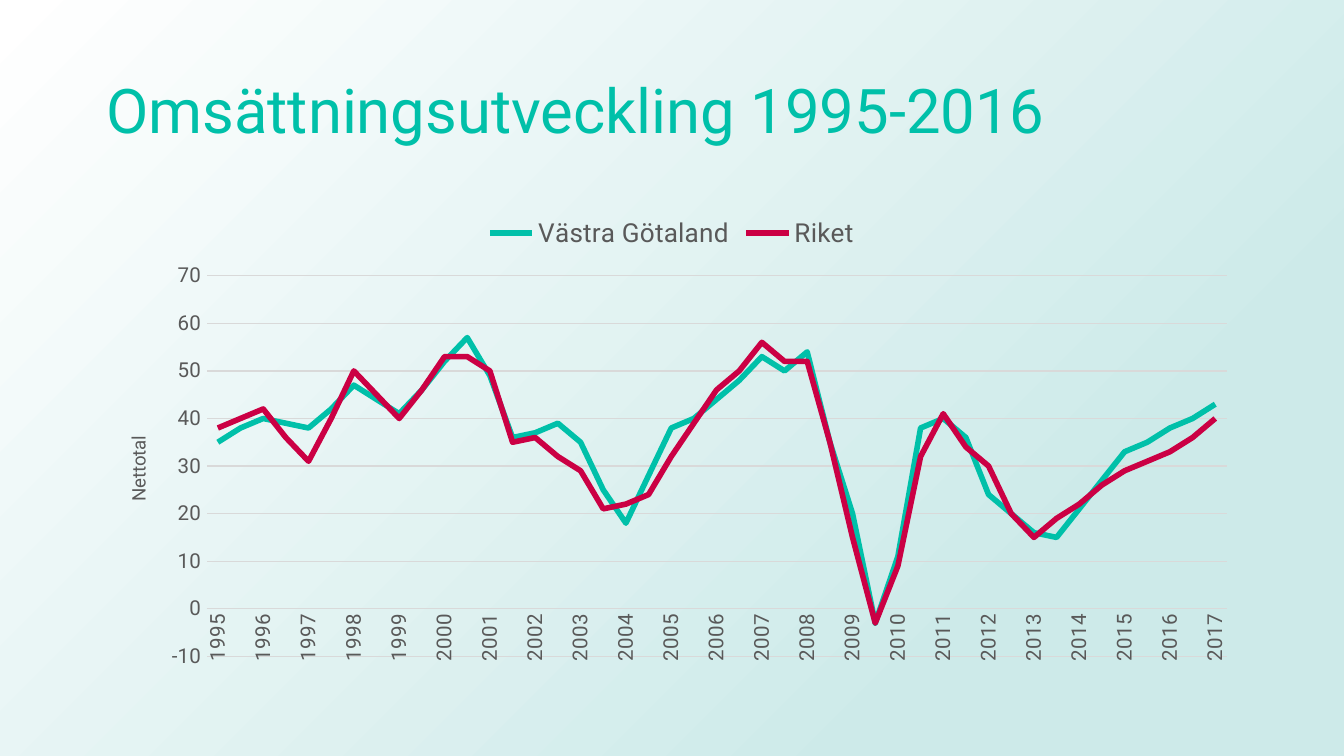
from lxml.etree import fromstring as to_xml
from pptx import Presentation as Deck
from pptx.chart.data import CategoryChartData as Data
from pptx.dml.color import RGBColor as Rgb
from pptx.enum.chart import XL_CHART_TYPE as Kind, XL_LEGEND_POSITION as Side, XL_TICK_MARK as Tick
from pptx.enum.shapes import MSO_SHAPE as Form
from pptx.enum.text import MSO_ANCHOR as Anchor
from pptx.oxml.ns import nsdecls, qn
from pptx.util import Pt

PX = 914400 / 134.4
WIDE, HIGH = 1344, 756
FONT = "Roboto"
HEX = {"teal": "00C0A9", "red": "CB0044", "grid": "D9D9D9", "text": "595959",
       "mist": "CDEAE9", "white": "FFFFFF"}
YEARS = [str(1995 + n // 2) for n in range(45)]
LINES = {
    "Västra Götaland": ("teal", [
        35, 38, 40, 39, 38, 42, 47, 44, 41, 46, 52, 57, 49, 36, 37,
        39, 35, 25, 18, 28, 38, 40, 44, 48, 53, 50, 54, 35, 20, -3,
        11, 38, 40, 36, 24, 20, 16, 15, 21, 27, 33, 35, 38, 40, 43]),
    "Riket": ("red", [
        38, 40, 42, 36, 31, 40, 50, 45, 40, 46, 53, 53, 50, 35, 36,
        32, 29, 21, 22, 24, 32, 39, 46, 50, 56, 52, 52, 35, 15, -3,
        9, 32, 41, 34, 30, 20, 15, 19, 22, 26, 29, 31, 33, 36, 40]),
}


def emu(*box):
    return [round(n * PX) for n in box]


def put(item, **vals):
    for key, val in vals.items():
        setattr(item, key, val)


def ink(font, size, hue):
    put(font, name=FONT, size=Pt(size), bold=False)
    font.color.rgb = Rgb.from_string(HEX[hue])


def stroke(line, hue, width):
    line.color.rgb = Rgb.from_string(HEX[hue])
    line.width = Pt(width)


def place(node, spot, **parts):
    for old in node.findall(qn("c:layout")):
        node.remove(old)
    inner = '<c:layoutTarget val="inner"/>' if "w" in parts else ""
    modes = "".join(f'<c:{key}Mode val="edge"/>' for key in "xy")
    sizes = "".join(f'<c:{key} val="{val:.3f}"/>' for key, val in parts.items())
    node.insert(spot, to_xml(
        f'<c:layout {nsdecls("c")}><c:manualLayout>{inner}{modes}{sizes}'
        '</c:manualLayout></c:layout>'))


def add_back(slide, box):
    shape = slide.shapes.add_shape(Form.RECTANGLE, *emu(*box))
    shape.shadow.inherit = False
    shape.line.fill.background()
    stops = "".join(f'<a:gs pos="{pos}"><a:srgbClr val="{HEX[hue]}"/></a:gs>'
                    for pos, hue in ((23000, "mist"), (100000, "white")))
    props = shape.element.spPr
    props.find(qn("a:prstGeom")).addnext(to_xml(
        f'<a:gradFill {nsdecls("a")} rotWithShape="1"><a:gsLst>{stops}</a:gsLst>'
        '<a:path path="circle"><a:fillToRect l="100000" t="100000"/></a:path>'
        '</a:gradFill>'))


def add_title(slide, box):
    frame = slide.shapes.add_textbox(*emu(*box)).text_frame
    put(frame, word_wrap=True, vertical_anchor=Anchor.MIDDLE)
    para = frame.paragraphs[0]
    put(para, text="Omsättningsutveckling 1995-2016", line_spacing=0.9)
    ink(para.runs[0].font, 33, "teal")


def style_years(axis):
    put(axis, major_tick_mark=Tick.NONE, has_major_gridlines=False)
    ink(axis.tick_labels.font, 11, "text")
    stroke(axis.format.line, "grid", 0.75)
    node = axis.tick_labels.font._element.getroottree().getroot().find(".//" + qn("c:catAx"))
    body = node.find(qn("c:txPr")).find(qn("a:bodyPr"))
    body.set("rot", "-5400000")
    body.set("vert", "horz")
    node.find(qn("c:noMultiLvlLbl")).addprevious(
        to_xml(f'<c:tickLblSkip {nsdecls("c")} val="2"/>'))


def style_scale(axis):
    put(axis, minimum_scale=-10, maximum_scale=70, major_unit=10,
        major_tick_mark=Tick.NONE, has_major_gridlines=True)
    put(axis.tick_labels, number_format="0", number_format_is_linked=False)
    ink(axis.tick_labels.font, 11, "text")
    axis.format.line.fill.background()
    stroke(axis.major_gridlines.format.line, "grid", 0.75)
    para = axis.axis_title.text_frame.paragraphs[0]
    para.text = "Nettotal"
    ink(para.runs[0].font, 10, "text")


def add_graph(slide, box):
    data = Data()
    data.categories = YEARS
    for name, (hue, vals) in LINES.items():
        data.add_series(name, vals)
    chart = slide.shapes.add_chart(Kind.LINE, *emu(*box), data).chart
    put(chart, has_title=False, has_legend=True)
    put(chart.legend, position=Side.TOP, include_in_layout=False)
    ink(chart.legend.font, 14, "text")
    style_years(chart.category_axis)
    style_scale(chart.value_axis)
    for line, (hue, vals) in zip(chart.plots[0].series, LINES.values()):
        line.smooth = False
        stroke(line.format.line, hue, 3)
    wide, high = box[2:]
    area = chart.element.find(".//" + qn("c:plotArea"))
    place(area, 0, x=113 / wide, y=74 / high, w=1020 / wide, h=381 / high)
    place(area.find(".//" + qn("c:title")), 1, x=30 / wide, y=231 / high)


def main():
    deck = Deck()
    deck.slide_width, deck.slide_height = emu(WIDE, HIGH)
    slide = deck.slides.add_slide(deck.slide_layouts[6])
    add_back(slide, (0, 0, WIDE, HIGH))
    add_title(slide, (93, 40, 1158, 147))
    add_graph(slide, (93, 202, 1158, 479))
    deck.save("out.pptx")


if __name__ == "__main__":
    main()
